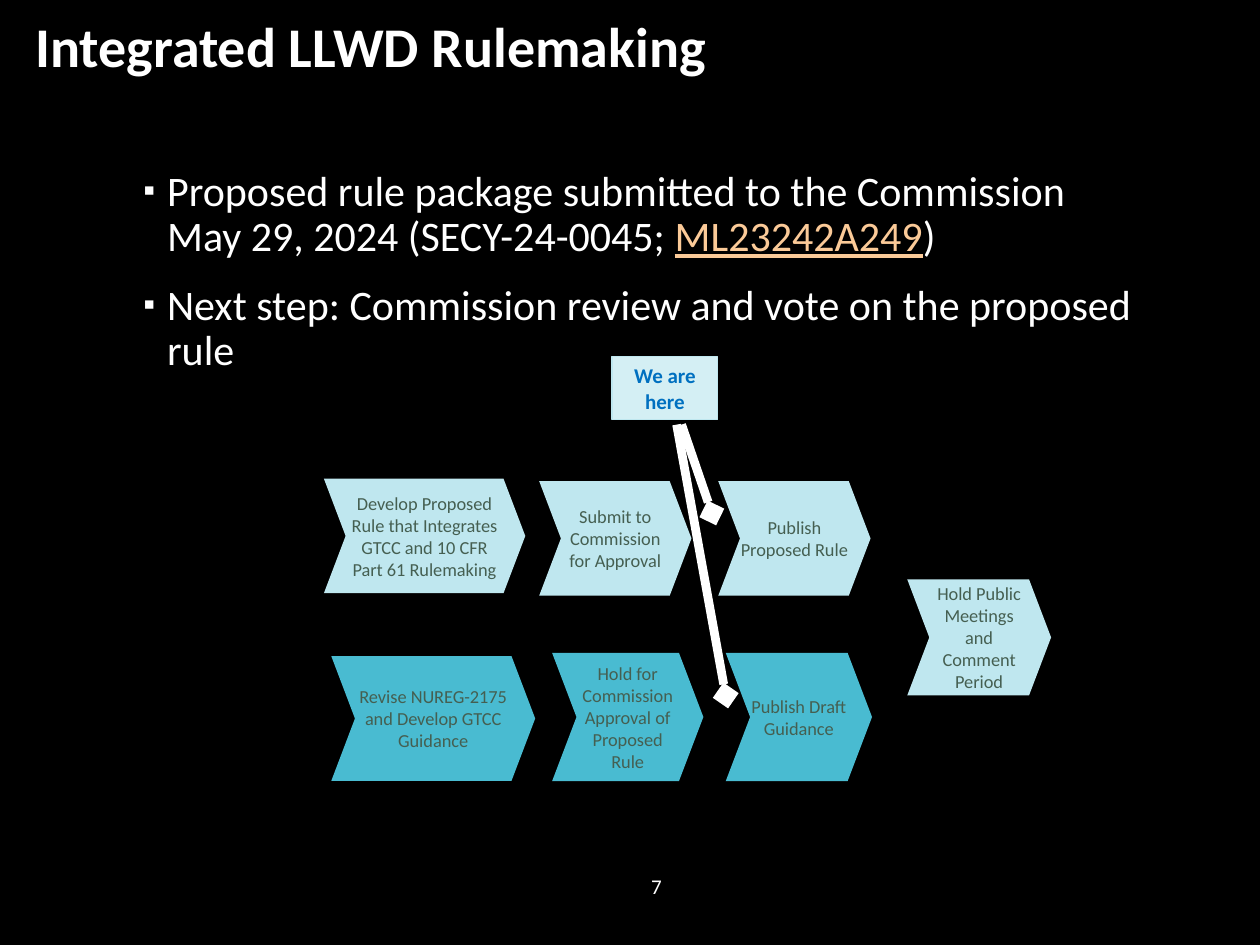
"""Build the slide on the status of the integrated LLWD rulemaking."""
from lxml import etree
from pptx import Presentation
from pptx import util as u
from pptx.dml.color import RGBColor
from pptx.enum import shapes, text
from pptx.oxml.ns import qn

THEME = {
    "font": "Calibri",
    "background": "000000", "white": "FFFFFF", "link": "FBCA98",
    "rule": "BFE7EF", "guidance": "49BBD1", "step_text": "455F51",
    "callout": "D4EFF4", "callout_text": "0070C0",
    "title_size": 32, "body_size": 24, "small_size": 12, "step_size": 10.5,
}
CENTER, LEFT, RIGHT = text.PP_ALIGN.CENTER, text.PP_ALIGN.LEFT, text.PP_ALIGN.RIGHT
MIDDLE, TOP = text.MSO_ANCHOR.MIDDLE, text.MSO_ANCHOR.TOP

TITLE = ("Integrated LLWD Rulemaking", (0.46, 0.2, 22.02, 1.6))
BODY_BOX = (2.64, 3.3, 21.41, 12.9)
BULLETS = [
    [("Proposed rule package submitted to the Commission \v"
      "May 29, 2024 (SECY-24-0045; ", "white"),
     ("ML23242A249", "link"), (")", "white")],
    [("Next step: Commission review and vote on the proposed rule", "white")],
]
STEPS = [
    ("Develop Proposed Rule that Integrates GTCC and 10 CFR Part 61 Rulemaking",
     "rule", (6.53, 9.65, 4.06, 2.31)),
    ("Submit to Commission for Approval", "rule", (10.87, 9.7, 3.07, 2.31)),
    ("Publish Proposed Rule", "rule", (14.48, 9.7, 3.07, 2.31)),
    ("Hold Public Meetings and Comment Period", "rule", (18.29, 11.68, 2.9, 2.34)),
    ("Revise NUREG-2175 and Develop GTCC Guidance", "guidance", (6.68, 13.23, 4.11, 2.51)),
    ("Hold for Commission Approval of Proposed Rule", "guidance", (11.13, 13.16, 3.05, 2.59)),
    ("Publish Draft Guidance", "guidance", (14.63, 13.16, 2.95, 2.59)),
]
CALLOUT = ("We are here", (12.34, 7.19, 2.13, 1.27))
POINTERS = [(13.74, 8.56, 14.35, 10.34), (13.64, 8.56, 14.63, 14.02)]
PAGE_NUMBER = ("7", (11.84, 17.07, 1.75, 1.6))


def apply(target, **values):
    for name, value in values.items():
        setattr(target, name, value)


def color(name):
    return RGBColor.from_string(THEME[name])


def lengths(values):
    return [u.Cm(value) for value in values]


def add_run(paragraph, words, tint, size, **font_format):
    first, *rest = words.split("\v")
    for index, part in enumerate([first, *rest]):
        if index:
            paragraph.add_line_break()
        run = paragraph.add_run()
        run.text = part
        apply(run.font, name=THEME["font"], size=u.Pt(THEME[size]), **font_format)
        run.font.color.rgb = color(tint)


def write(shape, words, tint, size, alignment, anchor=MIDDLE, bold=False):
    apply(shape.text_frame, word_wrap=True, vertical_anchor=anchor)
    paragraph = shape.text_frame.paragraphs[0]
    paragraph.alignment = alignment
    add_run(paragraph, words, tint, size, bold=bold)
    return paragraph


def add_bullet(paragraph):
    properties = paragraph._p.get_or_add_pPr()
    indent = u.Cm(0.48)
    properties.set("marL", str(indent))
    properties.set("indent", str(-indent))
    bullet_color = etree.SubElement(properties, qn("a:buClr"))
    etree.SubElement(bullet_color, qn("a:srgbClr"), val=THEME["white"])
    etree.SubElement(properties, qn("a:buSzPct"), val="80000")
    etree.SubElement(properties, qn("a:buFont"), typeface="Arial")
    etree.SubElement(properties, qn("a:buChar"), char="▪")


def add_body(slide):
    frame = slide.shapes.add_textbox(*lengths(BODY_BOX)).text_frame
    frame.word_wrap = True
    for index, runs in enumerate(BULLETS):
        paragraph = frame.add_paragraph() if index else frame.paragraphs[0]
        add_bullet(paragraph)
        apply(paragraph, line_spacing=0.9, space_before=u.Pt(7.5 if index else 0),
              space_after=u.Pt(0 if index else 6))
        for words, tint in runs:
            add_run(paragraph, words, tint, "body_size", underline=tint == "link")


def add_filled(slide, kind, box, fill):
    shape = slide.shapes.add_shape(kind, *lengths(box))
    shape.shadow.inherit = False
    shape.fill.solid()
    shape.fill.fore_color.rgb = color(fill)
    shape.line.fill.background()
    return shape


def add_step(slide, words, fill, box):
    shape = add_filled(slide, shapes.MSO_SHAPE.CHEVRON, box, fill)
    shape.adjustments[0] = 0.19
    apply(shape.text_frame, margin_left=0, margin_right=0)
    write(shape, words, "step_text", "step_size", CENTER)


def add_callout(slide, words, box):
    shape = add_filled(slide, shapes.MSO_SHAPE.RECTANGLE, box, "callout")
    shape.line.color.rgb = color("rule")
    shape.line.width = u.Pt(0.75)
    write(shape, words, "callout_text", "small_size", CENTER, TOP, bold=True)


def add_pointer(slide, ends):
    connector = slide.shapes.add_connector(shapes.MSO_CONNECTOR.STRAIGHT, *lengths(ends))
    connector.line.color.rgb = color("white")
    connector.line.width = u.Pt(5)
    properties = connector._element.spPr
    etree.SubElement(properties.find(qn("a:ln")), qn("a:tailEnd"), type="diamond")
    etree.SubElement(properties, qn("a:effectLst"))


def main():
    presentation = Presentation()
    apply(presentation, slide_width=u.Cm(25.4), slide_height=u.Cm(19.05))
    slide = presentation.slides.add_slide(presentation.slide_layouts[5])
    slide.background.fill.solid()
    slide.background.fill.fore_color.rgb = color("background")

    title = slide.shapes.title
    words, box = TITLE
    apply(title, **dict(zip(("left", "top", "width", "height"), lengths(box))))
    write(title, words, "white", "title_size", LEFT, bold=True).line_spacing = 0.9

    add_body(slide)
    words, box = PAGE_NUMBER
    write(slide.shapes.add_textbox(*lengths(box)), words, "white", "small_size", RIGHT)
    for step in STEPS:
        add_step(slide, *step)
    add_callout(slide, *CALLOUT)
    for ends in POINTERS:
        add_pointer(slide, ends)
    presentation.save("out.pptx")


if __name__ == "__main__":
    main()
